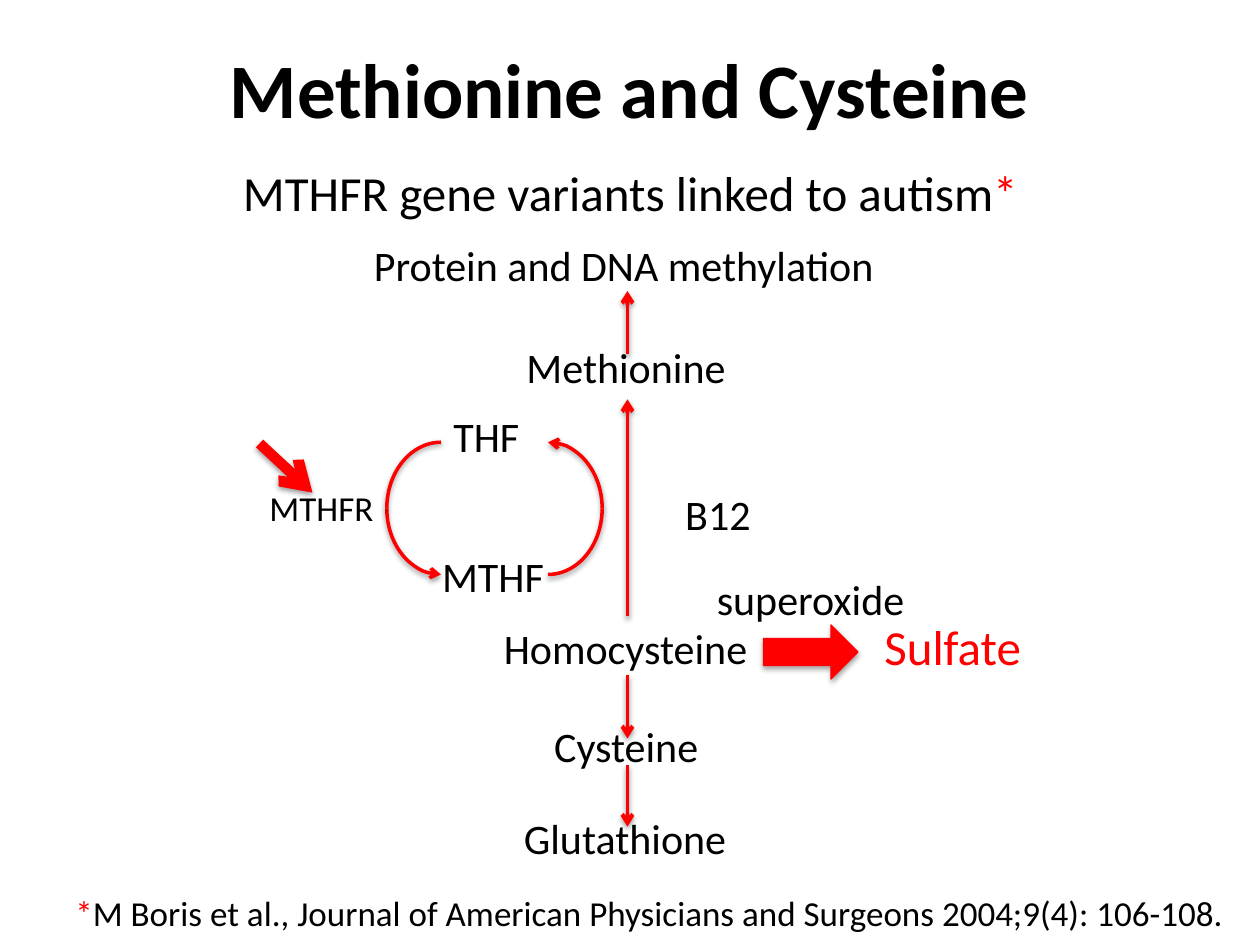
from typing import NamedTuple

from lxml import etree
from pptx import Presentation
from pptx.dml.color import RGBColor
from pptx.enum import shapes, text
from pptx.oxml import ns
from pptx.util import Inches, Pt

BLACK, RED = "000000", "FF0000"
FONT = "Calibri"


class Span(NamedTuple):
    words: str
    color: str = BLACK


class Label(NamedTuple):
    spans: list[Span]
    left: float
    top: float
    width: float
    height: float = 0.5
    size: int = 24


class Arrow(NamedTuple):
    start: tuple[float, float]
    end: tuple[float, float]
    weight: float = 2.25


class Arc(NamedTuple):
    left: float
    flips: tuple[str, ...]
    has_head: bool


AXIS = 4.98  # centre line of the pathway

LABELS = [
    Label([Span("Methionine")], 4.08, 2.66, 1.8),
    Label([Span("THF")], 3.5, 3.21, 0.73),
    Label([Span("MTHF")], 3.41, 4.32, 1.02),
    Label([Span("B12")], 5.34, 3.83, 0.73),
    Label([Span("Homocysteine")], 3.9, 4.89, 2.16),
    Label([Span("Cysteine")], 4.3, 5.67, 1.37),
    Label([Span("Sulfate", RED)], 6.92, 4.84, 1.31, 0.57, 28),
    Label([Span("Glutathione")], 4.06, 6.4, 1.83),
    Label([Span("Protein and DNA methylation")], 2.87, 1.85, 4.23),
    Label([Span("MTHFR")], 2.04, 3.81, 1.03, 0.44, 20),
    Label([Span("*", RED), Span("M Boris et al., Journal of American Physicians "
                                "and Surgeons 2004;9(4): 106-108.")],
          0.5, 7.03, 9.41, 0.44, 20),
    Label([Span("MTHFR gene variants linked to autism"), Span("*", RED)],
          1.83, 1.24, 6.45, 0.57, 28),
    Label([Span("superoxide")], 5.59, 4.5, 1.72),
]

ARROWS = [
    Arrow((AXIS, 4.89), (AXIS, 3.17)),
    Arrow((AXIS, 6.07), (AXIS, 6.56)),
    Arrow((AXIS, 5.36), (AXIS, 5.86)),
    Arrow((AXIS, 2.81), (AXIS, 2.31)),
    Arrow((2.06, 3.52), (2.48, 3.91), 6),
]

# Two half loops of the folate cycle, each made of two quarter arcs
ARCS = [
    Arc(3.92, (), True),
    Arc(3.92, ("flipV",), False),
    Arc(3.07, ("flipH", "flipV"), True),
    Arc(3.07, ("flipH",), False),
]


def rgb(color: str) -> RGBColor:
    return RGBColor.from_string(color)


def add_label(page, label: Label):
    box = page.shapes.add_textbox(Inches(label.left), Inches(label.top),
                                  Inches(label.width), Inches(label.height))
    box.text_frame.word_wrap = False
    para = box.text_frame.paragraphs[0]
    for part in label.spans:
        span = para.add_run()
        span.text = part.words
        span.font.name = FONT
        span.font.size = Pt(label.size)
        span.font.color.rgb = rgb(part.color)
    return box


def style_line(shape, weight: float, arrow_end: str = "", opacity: int = 38,
               distance: float = 1.6) -> None:
    """Red line with an optional arrowhead and a soft shadow below."""
    shape.line.color.rgb = rgb(RED)
    shape.line.width = Pt(weight)
    properties = shape._element.spPr
    if arrow_end:
        line = properties.find(ns.qn("a:ln"))
        etree.SubElement(line, ns.qn(f"a:{arrow_end}"), type="arrow")
    effects = etree.SubElement(properties, ns.qn("a:effectLst"))
    shadow = etree.SubElement(effects, ns.qn("a:outerShdw"), blurRad=str(Pt(3.1)),
                              dist=str(Pt(distance)), dir="5400000", rotWithShape="0")
    tint = etree.SubElement(shadow, ns.qn("a:srgbClr"), val=BLACK)
    etree.SubElement(tint, ns.qn("a:alpha"), val=str(opacity * 1000))


def add_arrow(page, arrow: Arrow) -> None:
    connector = page.shapes.add_connector(
        shapes.MSO_CONNECTOR.STRAIGHT,
        *(Inches(value) for value in arrow.start + arrow.end))
    style_line(connector, arrow.weight, "tailEnd")


def add_arc(page, arc: Arc) -> None:
    shape = page.shapes.add_shape(shapes.MSO_SHAPE.ARC, Inches(arc.left), Inches(3.51),
                                  Inches(0.86), Inches(1.05))
    shape.fill.background()
    for flip in arc.flips:
        shape._element.spPr.xfrm.set(flip, "1")
    style_line(shape, 2, "headEnd" if arc.has_head else "")


def main() -> None:
    deck = Presentation()
    deck.slide_width, deck.slide_height = Inches(10), Inches(7.5)
    page = deck.slides.add_slide(deck.slide_layouts[6])

    # Title
    title = add_label(page, Label([Span("Methionine and Cysteine")], 0.5, 0.07, 9, 1.25, 44))
    title.text_frame.word_wrap = True
    title.text_frame.vertical_anchor = text.MSO_ANCHOR.MIDDLE
    heading = title.text_frame.paragraphs[0]
    heading.alignment = text.PP_ALIGN.CENTER
    heading.runs[0].font.bold = True

    # Compounds, subtitle and citation
    for label in LABELS:
        add_label(page, label)

    # Block arrow to sulfate
    block = page.shapes.add_shape(shapes.MSO_SHAPE.RIGHT_ARROW, Inches(6.06), Inches(4.96),
                                  Inches(0.75), Inches(0.43))
    block.fill.solid()
    block.fill.fore_color.rgb = rgb(RED)
    style_line(block, 0.75, opacity=35, distance=1.8)

    # Pathway arrows and folate cycle
    for arrow in ARROWS:
        add_arrow(page, arrow)
    for arc in ARCS:
        add_arc(page, arc)

    deck.save("out.pptx")


if __name__ == "__main__":
    main()
